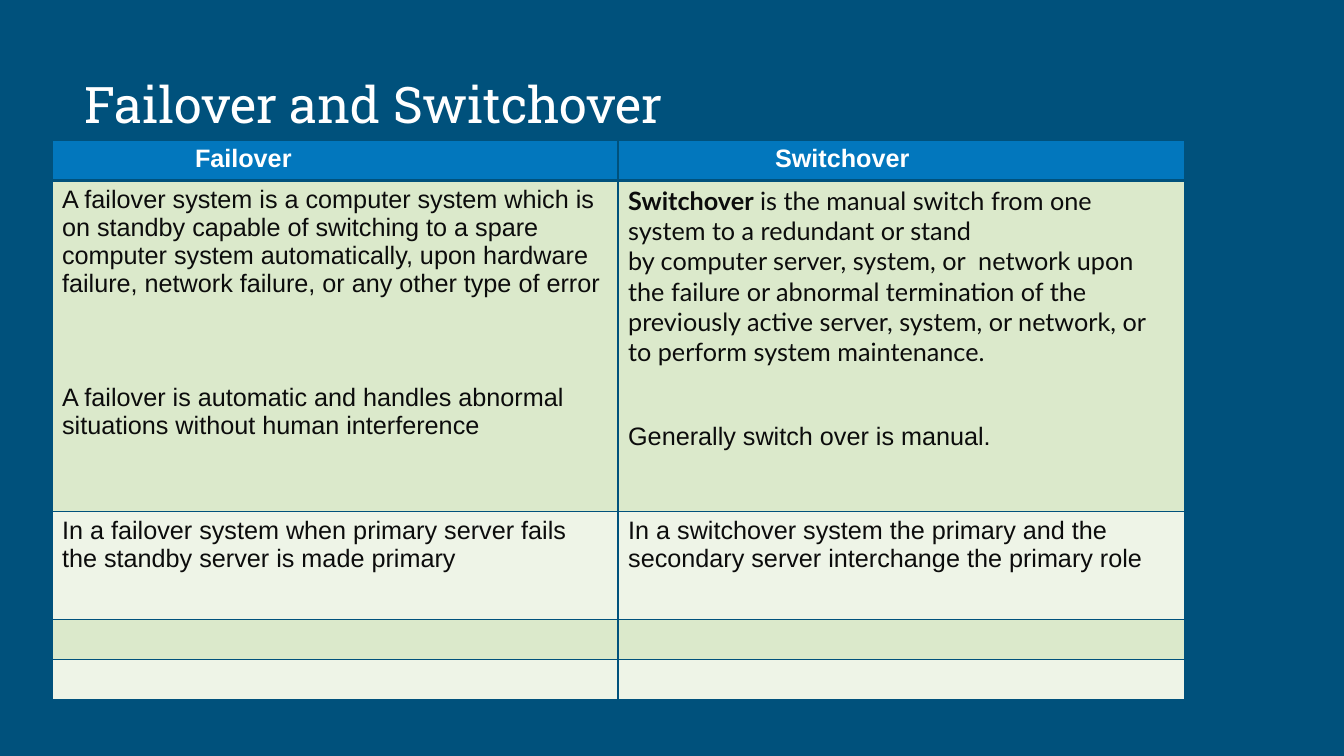
from lxml import etree
from pptx import Presentation, util as u
from pptx.dml.color import RGBColor
from pptx.oxml.ns import qn

PX = 9071  # EMU per px, at 100.8 px to the inch
NAVY, BLUE, WHITE, INK = "00517C", "0277BD", "FFFFFF", "0C0C0C"
BANDS = ["DBE9CB", "EEF4E7"]
NBSP = chr(160)


def color(value):
    return RGBColor.from_string(value)


def style(run, size, font, value, bold=False):
    run.font.size = u.Pt(size)
    run.font.name = font
    run.font.bold = bold
    run.font.color.rgb = color(value)


deck = Presentation()
deck.slide_width, deck.slide_height = u.Inches(13.33), u.Inches(7.5)
slide = deck.slides.add_slide(deck.slide_layouts[6])
slide.background.fill.solid()
slide.background.fill.fore_color.rgb = color(NAVY)

# Title
title = slide.shapes.add_textbox(75 * PX, 68 * PX, 948 * PX, 145 * PX).text_frame
title.word_wrap = True
title.text = "Failover and Switchover"
style(title.paragraphs[0].runs[0], 36, "Roboto Slab", WHITE)

# Content: each cell holds paragraphs, each paragraph a list of (text, font, bold);
# "~" stands for a non-breaking space
rows = [
    [[[("Failover", "Arial", True)]], [[("Switchover", "Arial", True)]]],
    [
        [
            [("A failover system is a computer system which is on standby capable of "
              "switching to a spare computer system automatically, upon hardware failure, "
              "network failure, or any other type of error", "Arial", False)],
            [("A failover is automatic and handles abnormal situations without human "
              "interference", "Arial", False)],
        ],
        [
            [("Switchover", "Lato", True),
             ("~is the manual switch from one system to a~redundant~or stand "
              "by~computer~server,~system, or ~network~upon the failure or~abnormal "
              "termination~of the previously active server, system, or network, or to "
              "perform system maintenance.", "Lato", False)],
            [("Generally switch over is manual.", "Arial", False)],
        ],
    ],
    [
        [[("In a failover system when primary server fails the standby server is made "
           "primary", "Arial", False)]],
        [[("In a switchover system the primary and the secondary server interchange the "
           "primary role", "Arial", False)]],
    ],
    [[], []],
    [[], []],
]
row_heights = [38, 331, 108, 38, 38]
header_insets = [143, 157]
paragraph_gaps = [61, 40]  # points before the second paragraph, by column

# Comparison table
comparison = slide.shapes.add_table(
    len(rows), 2, 52 * PX, 140 * PX, 1132 * PX, sum(row_heights) * PX).table
for column in comparison.columns:
    column.width = 566 * PX
for r, (contents, height) in enumerate(zip(rows, row_heights)):
    comparison.rows[r].height = height * PX
    for c, paragraphs in enumerate(contents):
        cell = comparison.cell(r, c)
        if r == 0:
            cell.margin_left = header_insets[c] * PX

        # Borders, with a heavy rule under the header
        properties = cell._tc.get_or_add_tcPr()
        for side in "LRTB":
            heavy = (r, side) in [(0, "B"), (1, "T")]
            line = etree.SubElement(properties, qn("a:ln" + side),
                                    w=str(u.Pt(3 if heavy else 1)))
            fill = etree.SubElement(line, qn("a:solidFill"))
            etree.SubElement(fill, qn("a:srgbClr"), val=NAVY)
        cell.fill.solid()
        cell.fill.fore_color.rgb = color(BANDS[(r - 1) % 2] if r else BLUE)

        # Text
        frame = cell.text_frame
        frame.paragraphs[0].font.size = u.Pt(18)
        for i, pieces in enumerate(paragraphs):
            paragraph = frame.add_paragraph() if i else frame.paragraphs[0]
            if i:
                paragraph.space_before = u.Pt(paragraph_gaps[c])
            for words, font, bold in pieces:
                run = paragraph.add_run()
                run.text = words.replace("~", NBSP)
                style(run, 18, font, INK if r else WHITE, bold)

deck.save("out.pptx")
